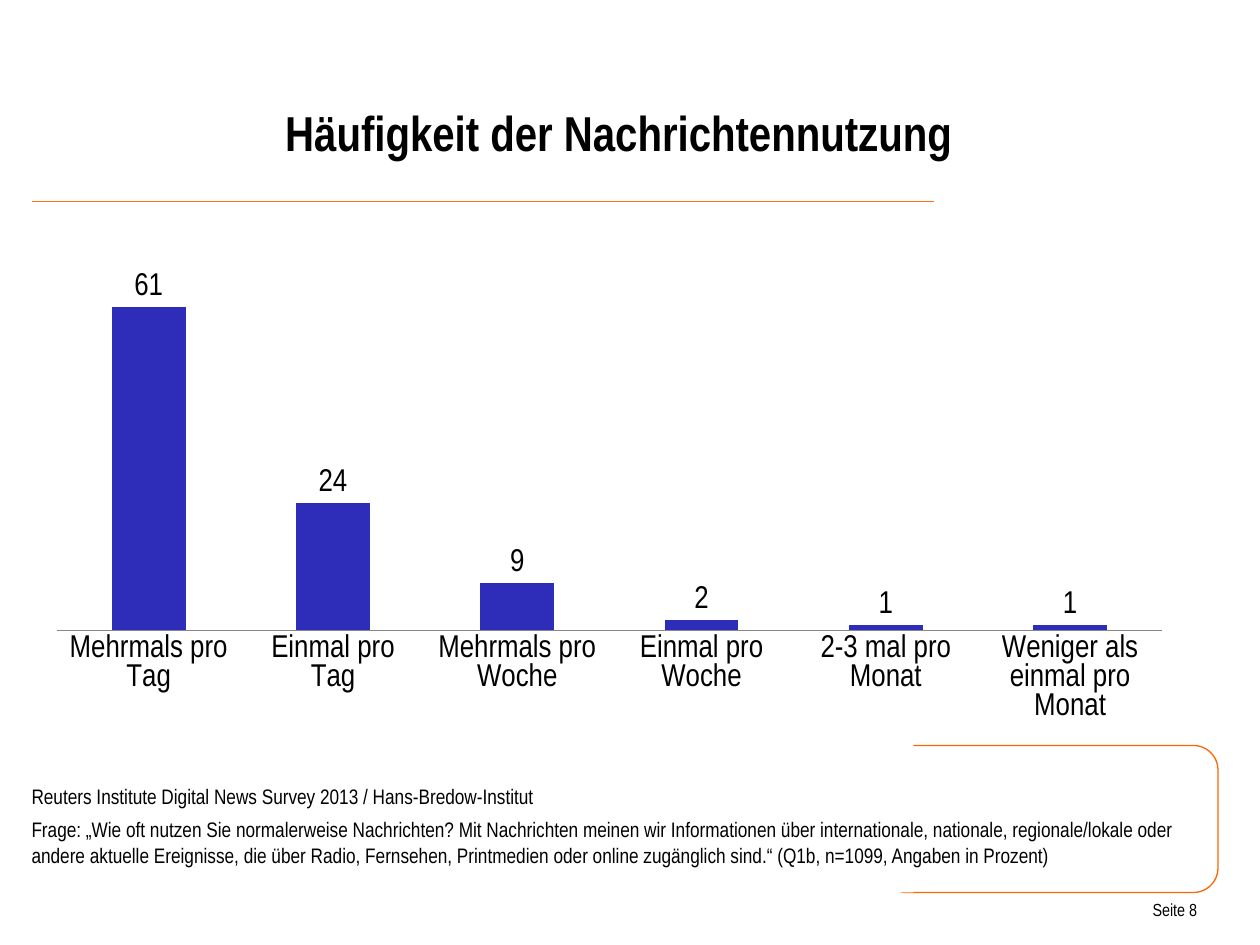
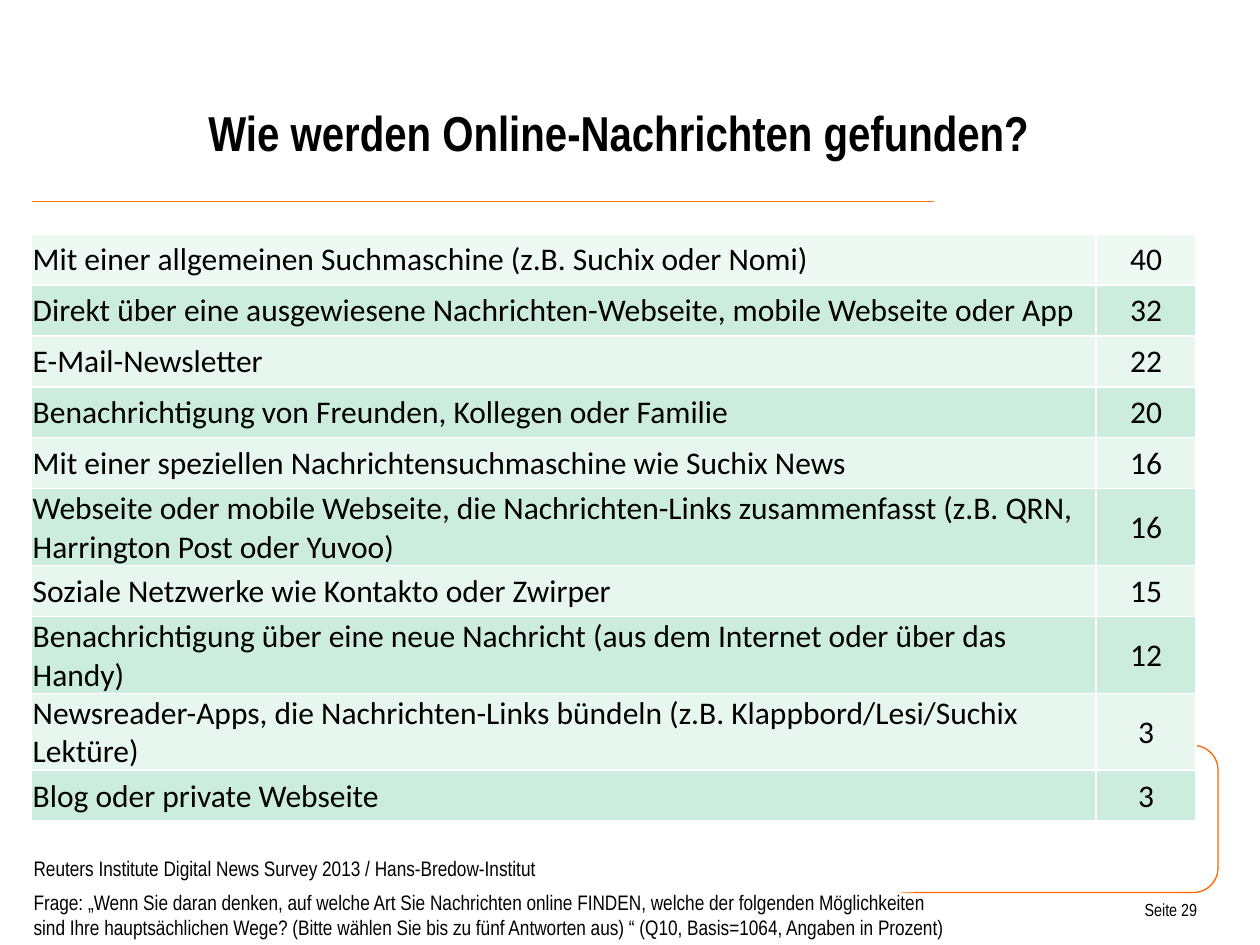
from lxml import etree
from pptx import Presentation, util as u
from pptx.chart.data import CategoryChartData
from pptx.dml.color import RGBColor
from pptx.enum import chart as ch, shapes, text
from pptx.oxml.ns import qn

# Shared style; every position is in grid units: 120 columns by 90 rows
WIDTH, HEIGHT = u.Inches(10), u.Inches(7.5)
UNIT = WIDTH // 120
NARROW, BODY_FONT = "Arial Narrow", "Calibri"
BLACK, WHITE, BLUE, GREY = "000000", "FFFFFF", "2D2DB9", "868686"
FRAME_ORANGE, RULE_ORANGE = "FF6600", "FF7310"
FIRST_ROW, DARK_ROW, LIGHT_ROW = "EEF9F4", "CCECDE", "E7F6EF"
LEFT, CENTER, RIGHT = (text.PP_ALIGN.LEFT, text.PP_ALIGN.CENTER,
                       text.PP_ALIGN.RIGHT)
SOURCE = "Reuters Institute Digital News Survey 2013 / Hans-Bredow-Institut"

FREQUENCY = {
    "Mehrmals pro Tag": 61,
    "Einmal pro Tag": 24,
    "Mehrmals pro Woche": 9,
    "Einmal pro Woche": 2,
    "2-3 mal pro Monat": 1,
    "Weniger als einmal pro Monat": 1,
}
FREQUENCY_QUESTION = (
    "Frage: „Wie oft nutzen Sie normalerweise Nachrichten? Mit Nachrichten "
    "meinen wir Informationen über internationale, nationale, "
    "regionale/lokale oder andere aktuelle Ereignisse, die über Radio, "
    "Fernsehen, Printmedien oder online zugänglich sind.“ "
    "(Q1b, n=1099, Angaben in Prozent)")

NEWS_ROUTES = [
    ("Mit einer allgemeinen Suchmaschine (z.B. Suchix oder Nomi)", 40),
    ("Direkt über eine ausgewiesene Nachrichten-Webseite, mobile Webseite "
     "oder App", 32),
    ("E-Mail-Newsletter", 22),
    ("Benachrichtigung von Freunden, Kollegen oder Familie", 20),
    ("Mit einer speziellen Nachrichtensuchmaschine wie Suchix News", 16),
    ("Webseite oder mobile Webseite, die Nachrichten-Links zusammenfasst "
     "(z.B. QRN, Harrington Post oder Yuvoo)", 16),
    ("Soziale Netzwerke wie Kontakto oder Zwirper", 15),
    ("Benachrichtigung über eine neue Nachricht (aus dem Internet oder über "
     "das Handy)", 12),
    ("Newsreader-Apps, die Nachrichten-Links bündeln "
     "(z.B. Klappbord/Lesi/Suchix Lektüre)", 3),
    ("Blog oder private Webseite", 3),
]
ROUTES_QUESTION = (
    "Frage: „Wenn Sie daran denken, auf welche Art Sie Nachrichten online "
    "FINDEN, welche der folgenden Möglichkeiten\v"
    "sind Ihre hauptsächlichen Wege? (Bitte wählen Sie bis zu fünf Antworten "
    "aus) “ (Q10, Basis=1064, Angaben in Prozent)")


def color(value):
    return RGBColor.from_string(value)


def grid(*units):
    return [round(n * UNIT) for n in units]


def set_font(font, size, name=NARROW, bold=False):
    font.size, font.name, font.bold = u.Pt(size), name, bold
    font.color.rgb = color(BLACK)


def write(frame, *lines, size=12, name=NARROW, bold=False, align=LEFT,
          anchor=text.MSO_ANCHOR.TOP, gap=0):
    frame.word_wrap = True
    frame.vertical_anchor = anchor
    for index, line in enumerate(lines):
        paragraph = frame.add_paragraph() if index else frame.paragraphs[0]
        paragraph.text = line
        paragraph.alignment = align
        paragraph.space_before = u.Pt(gap if index else 0)
        paragraph.space_after = u.Pt(gap)
        for run in paragraph.runs:
            set_font(run.font, size, name, bold)


def add_text(slide, area, *lines, inset_left=0, inset_right=0.1, **style):
    frame = slide.shapes.add_textbox(*grid(*area)).text_frame
    frame.margin_left, frame.margin_right = (u.Inches(inset_left),
                                             u.Inches(inset_right))
    frame.margin_top = frame.margin_bottom = u.Inches(0.05)
    write(frame, *lines, **style)


def add_box(slide, kind, area, fill=None, line=None):
    box = slide.shapes.add_shape(kind, *grid(*area))
    box.shadow.inherit = False
    if fill:
        box.fill.solid()
        box.fill.fore_color.rgb = color(fill)
    else:
        box.fill.background()
    if line:
        box.line.color.rgb = color(line)
        box.line.width = u.Pt(0.75)
    else:
        box.line.fill.background()


def add_rule(slide, start, end):
    rule = slide.shapes.add_connector(shapes.MSO_CONNECTOR.STRAIGHT,
                                      *grid(*start, *end))
    rule.line.color.rgb = color(RULE_ORANGE)
    rule.line.width = u.Pt(1)
    etree.SubElement(rule._element.spPr, qn("a:effectLst"))


def add_page(presentation, title, number):
    slide = presentation.slides.add_slide(presentation.slide_layouts[6])
    # Open orange frame: the white box hides its left end
    add_box(slide, shapes.MSO_SHAPE.ROUNDED_RECTANGLE, (84, 71, 32, 14),
            line=FRAME_ORANGE)
    add_box(slide, shapes.MSO_SHAPE.RECTANGLE, (83, 69, 4, 16), fill=WHITE)
    add_rule(slide, (89, 19.2), (3, 19.2))
    add_text(slide, (3, 3, 113, 13), title, size=28, bold=True, align=CENTER,
             anchor=text.MSO_ANCHOR.BOTTOM)
    add_text(slide, (104, 85, 10, 4), f"Seite {number}", size=10,
             align=RIGHT, inset_left=0.04, inset_right=0)
    return slide


def fix_plot_area(chart, **shares):
    plot_area = chart._chartSpace.chart.plotArea
    layout = plot_area.find(qn("c:layout"))
    if layout is None:
        layout = etree.Element(qn("c:layout"))
        plot_area.insert(0, layout)
    manual = etree.SubElement(layout, qn("c:manualLayout"))
    settings = {"layoutTarget": "inner", "xMode": "edge", "yMode": "edge",
                **shares}
    for tag, value in settings.items():
        etree.SubElement(manual, qn(f"c:{tag}")).set("val", str(value))


def add_columns(slide, area, values):
    data = CategoryChartData(number_format="0")
    data.categories = list(values)
    data.add_series("Series 1", list(values.values()))
    chart = slide.shapes.add_chart(ch.XL_CHART_TYPE.COLUMN_CLUSTERED,
                                   *grid(*area), data).chart
    chart.has_legend = chart.has_title = False
    set_font(chart.font, 10)
    fix_plot_area(chart, x=0.02, y=0.01, w=0.96, h=0.78)

    # Axes
    chart.value_axis.visible = False
    chart.value_axis.has_major_gridlines = False
    chart.value_axis.minimum_scale, chart.value_axis.maximum_scale = 0, 70
    axis = chart.category_axis
    axis.major_tick_mark = axis.minor_tick_mark = ch.XL_TICK_MARK.NONE
    axis.format.line.color.rgb = color(GREY)
    set_font(axis.tick_labels.font, 18)

    # Columns and their values
    plot = chart.plots[0]
    plot.gap_width, plot.overlap, plot.vary_by_categories = 150, -25, False
    fill = plot.series[0].format.fill
    fill.solid()
    fill.fore_color.rgb = color(BLUE)
    plot.has_data_labels = True
    labels = plot.data_labels
    labels.show_value = True
    labels.number_format, labels.number_format_is_linked = "0", False
    labels.position = ch.XL_LABEL_POSITION.OUTSIDE_END
    set_font(labels.font, 18)


def format_cell(cell, content, fill, align):
    cell.margin_left = cell.margin_right = cell.margin_top = u.Inches(0.01)
    cell.margin_bottom = 0
    write(cell.text_frame, content, size=18, name=BODY_FONT, align=align)
    cell.vertical_anchor = text.MSO_ANCHOR.MIDDLE
    properties = cell._tc.get_or_add_tcPr()
    for side in ("lnL", "lnR", "lnT", "lnB"):
        line = etree.SubElement(properties, qn(f"a:{side}"), w=str(u.Pt(1)))
        paint = etree.SubElement(line, qn("a:solidFill"))
        etree.SubElement(paint, qn("a:srgbClr"), val=WHITE)
    cell.fill.solid()
    cell.fill.fore_color.rgb = color(fill)


def add_ranking(slide, left, top, columns, entries):
    row_height = u.Pt(29.1)
    table = slide.shapes.add_table(
        len(entries), len(columns), *grid(left, top, sum(columns)),
        row_height * len(entries)).table
    table.first_row = table.horz_banding = False
    for column, width in zip(table.columns, grid(*columns)):
        column.width = width
    for index, (label, share) in enumerate(entries):
        table.rows[index].height = row_height
        fill = DARK_ROW if index % 2 else LIGHT_ROW if index else FIRST_ROW
        format_cell(table.cell(index, 0), label, fill, LEFT)
        format_cell(table.cell(index, 1), str(share), fill, CENTER)


def main():
    presentation = Presentation()
    presentation.slide_width, presentation.slide_height = WIDTH, HEIGHT

    # How often news is used
    slide = add_page(presentation, "Häufigkeit der Nachrichtennutzung", 8)
    add_text(slide, (3, 74, 111.7, 8.8), SOURCE, FREQUENCY_QUESTION, gap=2.4)
    add_columns(slide, (3.2, 24.2, 109.7, 45.4), FREQUENCY)

    # How online news is found
    slide = add_page(presentation, "Wie werden Online-Nachrichten gefunden?",
                     29)
    add_ranking(slide, 3, 22.3, (101.4, 9.5), NEWS_ROUTES)
    add_text(slide, (3.2, 80.9, 112.4, 8.5), SOURCE, ROUTES_QUESTION, gap=2.4)

    presentation.save("out.pptx")


if __name__ == "__main__":
    main()
